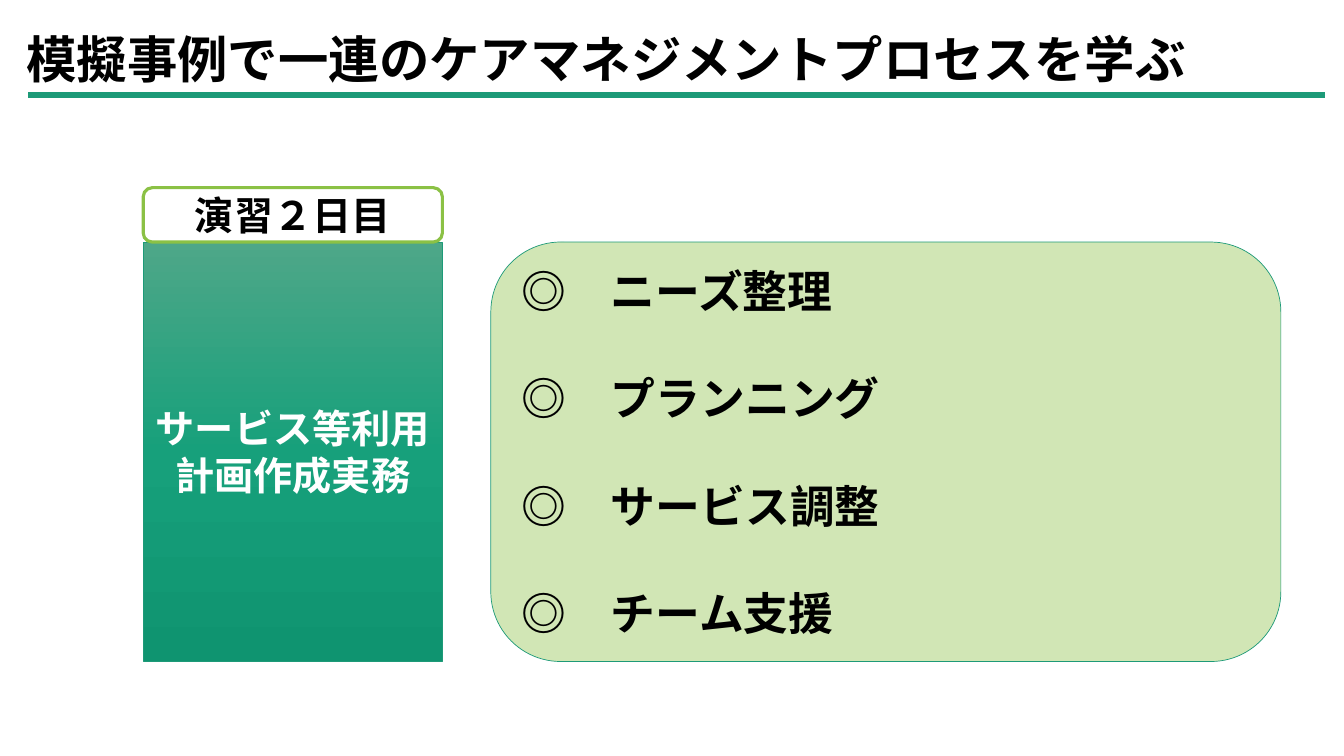
from copy import deepcopy

from pptx import Presentation
from pptx.dml.color import RGBColor
from pptx.enum.shapes import MSO_CONNECTOR, MSO_SHAPE
from pptx.enum.text import MSO_ANCHOR, MSO_AUTO_SIZE, PP_ALIGN
from pptx.oxml.ns import qn
from pptx.oxml.xmlchemy import OxmlElement
from pptx.util import Cm, Pt

TITLE = "模擬事例で一連のケアマネジメントプロセスを学ぶ"
DAY = "演習２日目"
COURSE = ["サービス等利用", "計画作成実務"]
TOPICS = ["ニーズ整理", "プランニング", "サービス調整", "チーム支援"]

FONT = "Noto Sans CJK JP"
LINE_HEIGHT = 1.2  # times the text size

BLACK = RGBColor(0x00, 0x00, 0x00)
WHITE = RGBColor(0xFF, 0xFF, 0xFF)
TEAL = RGBColor(0x1D, 0x9A, 0x78)
LIME = RGBColor(0x8B, 0xC1, 0x45)
PALE_GREEN = RGBColor(0xD1, 0xE6, 0xB5)
COURSE_GRADIENT = [
    (0, RGBColor(0x4E, 0xA7, 0x88)),
    (0.5, RGBColor(0x17, 0xA0, 0x7B)),
    (1, RGBColor(0x0F, 0x94, 0x70)),
]

# Layout in centimetres
BODY_TOP, BODY_HEIGHT = 6.1, 10.57
COURSE_LEFT, COURSE_WIDTH = 3.61, 7.54
TOPICS_LEFT, TOPICS_WIDTH = 12.37, 19.91
DAY_HEIGHT = 1.37
RULE_LEFT, RULE_RIGHT, RULE_Y = 0.71, 33.38, 2.39


def write(shape, lines, size, color, align, gap=0):
    """Fill a shape with bold lines, with gap points between paragraphs."""
    frame = shape.text_frame
    frame.text = "\n".join(lines)
    frame.word_wrap = True
    frame.auto_size = MSO_AUTO_SIZE.NONE
    frame.vertical_anchor = MSO_ANCHOR.MIDDLE
    for index, paragraph in enumerate(frame.paragraphs):
        paragraph.alignment = align
        paragraph.line_spacing = Pt(size * LINE_HEIGHT)
        paragraph.space_before = Pt(gap if index else 0)
        for run in paragraph.runs:
            font = run.font
            font.name, font.size, font.bold = FONT, Pt(size), True
            font.color.rgb = color
            east_asian = OxmlElement("a:ea")
            east_asian.set("typeface", FONT)
            run._r.rPr.find(qn("a:latin")).addnext(east_asian)


def add_box(slide, preset, left, top, width, height, line_color, line_width):
    box = slide.shapes.add_shape(preset, Cm(left), Cm(top), Cm(width), Cm(height))
    box.shadow.inherit = False
    box.line.color.rgb = line_color
    box.line.width = Pt(line_width)
    return box


def fill_solid(shape, color):
    shape.fill.solid()
    shape.fill.fore_color.rgb = color


def fill_downward(shape, stops):
    """Apply a top-to-bottom gradient of three stops."""
    shape.fill.gradient()
    shape.fill.gradient_angle = 270
    stop_list = shape._element.spPr.find(".//" + qn("a:gsLst"))
    stop_list.append(deepcopy(stop_list[-1]))
    for stop, (position, color) in zip(shape.fill.gradient_stops, stops):
        stop.position = position
        stop.color.rgb = color


def main():
    deck = Presentation()
    deck.slide_width, deck.slide_height = Cm(33.87), Cm(19.05)
    slide = deck.slides.add_slide(deck.slide_layouts[5])

    title = slide.shapes.title
    title.left, title.top, title.width, title.height = Cm(0.41), Cm(0.58), Cm(33), Cm(1.8)
    write(title, [TITLE], 36, BLACK, PP_ALIGN.LEFT)

    topics = add_box(slide, MSO_SHAPE.ROUNDED_RECTANGLE, TOPICS_LEFT, BODY_TOP,
                     TOPICS_WIDTH, BODY_HEIGHT, TEAL, 0.5)
    fill_solid(topics, PALE_GREEN)
    write(topics, [f"◎　{topic}" for topic in TOPICS], 32, BLACK, PP_ALIGN.LEFT,
          gap=32 * LINE_HEIGHT)

    course = add_box(slide, MSO_SHAPE.RECTANGLE, COURSE_LEFT, BODY_TOP,
                     COURSE_WIDTH, BODY_HEIGHT, TEAL, 0.5)
    fill_downward(course, COURSE_GRADIENT)
    write(course, COURSE, 28, WHITE, PP_ALIGN.CENTER)

    day = add_box(slide, MSO_SHAPE.ROUNDED_RECTANGLE, COURSE_LEFT, BODY_TOP - DAY_HEIGHT,
                  COURSE_WIDTH, DAY_HEIGHT, LIME, 2.25)
    fill_solid(day, WHITE)
    write(day, [DAY], 28, BLACK, PP_ALIGN.CENTER)

    rule = slide.shapes.add_connector(MSO_CONNECTOR.STRAIGHT, Cm(RULE_LEFT), Cm(RULE_Y),
                                      Cm(RULE_RIGHT), Cm(RULE_Y))
    rule.line.color.rgb = TEAL
    rule.line.width = Pt(4.5)
    rule._element.spPr.append(OxmlElement("a:effectLst"))

    deck.save("out.pptx")


if __name__ == "__main__":
    main()
